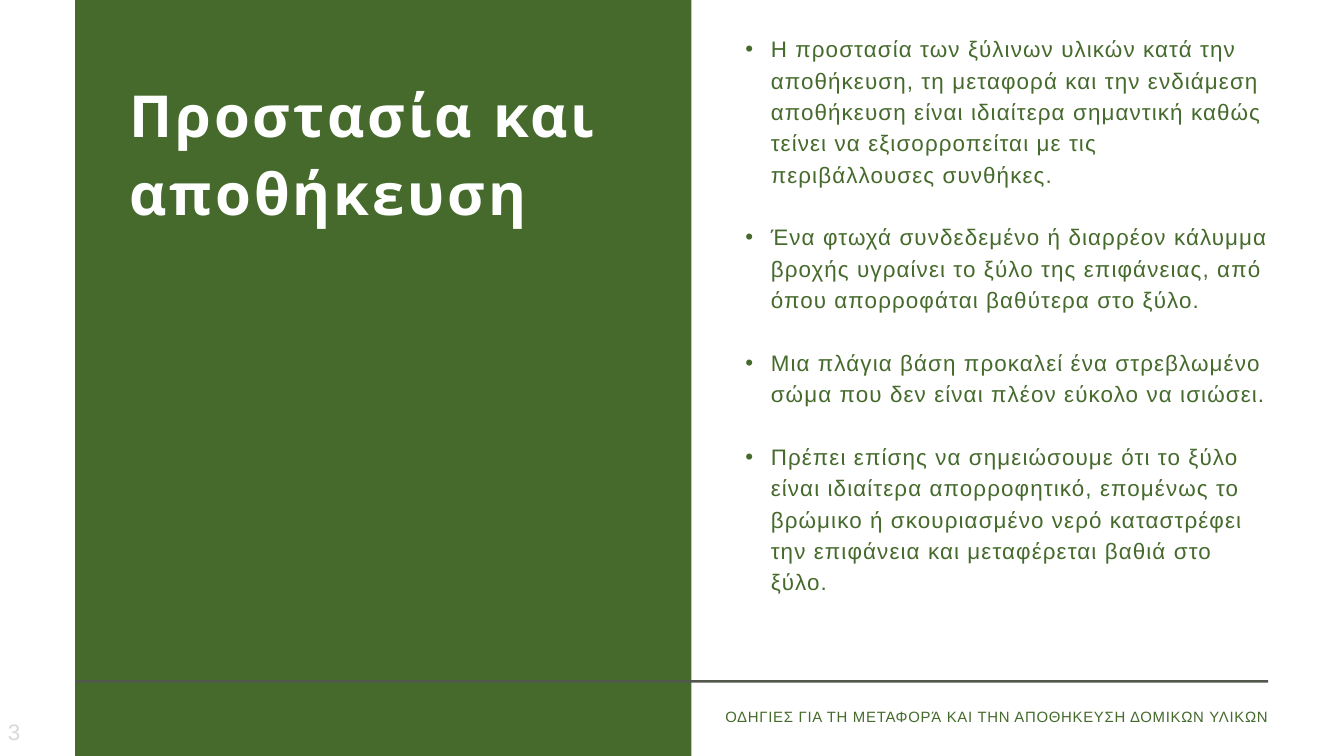
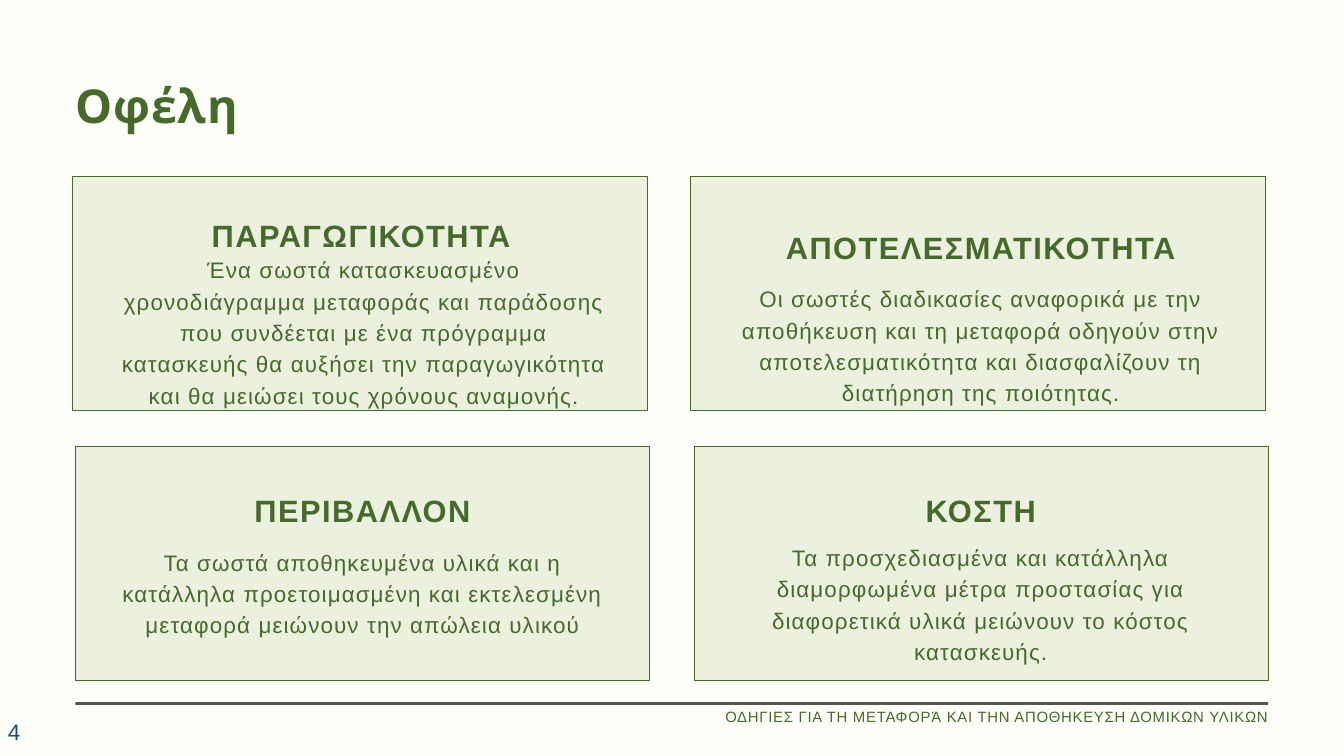
from pptx import Presentation
from pptx.dml.color import RGBColor
from pptx.enum.shapes import MSO_SHAPE as Shape
from pptx.enum.text import MSO_ANCHOR as Anchor, MSO_AUTO_SIZE as AutoSize, PP_ALIGN as Align
from pptx.oxml.ns import qn
from pptx.util import Inches, Pt
from lxml import etree

COLORS = {
    "green": "456A2C",
    "pale": "EBF1DE",
    "gray": "52584D",
    "white": "FFFFFF",
    "cream": "FEFFF8",
    "light_gray": "D9D9D9",
    "blue": "1E4D65",
}
TITLE_FONT = "League Spartan"
BODY_FONT = "Arial"
FOOTER = "ΟΔΗΓΙΕΣ ΓΙΑ ΤΗ ΜΕΤΑΦΟΡΆ ΚΑΙ ΤΗΝ ΑΠΟΘΗΚΕΥΣΗ ΔΟΜΙΚΩΝ ΥΛΙΚΩΝ"
MARGIN, RULE_WIDTH = 1.12, 17.75
CARD_WIDTH, CARD_HEIGHT, TEXT_WIDTH = 8.55, 3.48, 7.39


def add_box(slide, left, top, width, height, fill, line=None):
    shape = slide.shapes.add_shape(
        Shape.RECTANGLE, Inches(left), Inches(top), Inches(width), Inches(height))
    shape.shadow.inherit = False
    shape.fill.solid()
    shape.fill.fore_color.rgb = RGBColor.from_string(COLORS[fill])
    if line:
        shape.line.color.rgb = RGBColor.from_string(COLORS[line])
        shape.line.width = Pt(0.75)
    else:
        shape.line.fill.background()


def write(shape, box, texts, size, leading=None, color="green", font=BODY_FONT, bold=False,
          align=Align.LEFT, spacing=1.2, inset=0, anchor=Anchor.TOP, bullet=False):
    shape.left, shape.top, shape.width, shape.height = [Inches(length) for length in box]
    frame = shape.text_frame
    frame.word_wrap = True
    frame.auto_size = AutoSize.NONE
    frame.vertical_anchor = anchor
    frame.margin_left = frame.margin_right = Inches(inset)
    frame.margin_top = frame.margin_bottom = Inches(inset / 2)
    for index, text in enumerate(texts):
        paragraph = frame.add_paragraph() if index else frame.paragraphs[0]
        run = paragraph.add_run()
        run.text = text
        run._r.get_or_add_rPr().set("spc", str(round(spacing * 100)))
        paragraph.alignment = align
        if leading:
            paragraph.line_spacing = Pt(leading)
        if index:
            paragraph.space_before = Pt(leading)
        if bullet:
            properties = paragraph._p.get_or_add_pPr()
            properties.set("marL", str(Inches(0.38)))
            properties.set("indent", str(-Inches(0.38)))
            etree.SubElement(properties, qn("a:buFont")).set("typeface", "Arial")
            etree.SubElement(properties, qn("a:buChar")).set("char", "•")
        paragraph.font.name = font
        paragraph.font.size = Pt(size)
        paragraph.font.bold = bold
        paragraph.font.color.rgb = RGBColor.from_string(COLORS[color])


presentation = Presentation()
presentation.slide_width = Inches(20)
presentation.slide_height = Inches(11.25)

pages = [
    dict(number="3", number_color="light_gray", background="white", rule_top=10.12,
         title="Προστασία και αποθήκευση", title_box=(1.93, 1.05, 7.56, 2.36),
         title_style=dict(size=62, leading=83.7, color="white", spacing=3.1)),
    dict(number="4", number_color="blue", background="cream", rule_top=10.45,
         title="Οφέλη", title_box=(MARGIN, 1.05, 7.75, 0.94),
         title_style=dict(size=50, leading=66.8, spacing=1)),
]
advice = [
    "Η προστασία των ξύλινων υλικών κατά την αποθήκευση, τη μεταφορά και την ενδιάμεση "
    "αποθήκευση είναι ιδιαίτερα σημαντική καθώς τείνει να εξισορροπείται με τις "
    "περιβάλλουσες συνθήκες.",
    "Ένα φτωχά συνδεδεμένο ή διαρρέον κάλυμμα βροχής υγραίνει το ξύλο της επιφάνειας, "
    "από όπου απορροφάται βαθύτερα στο ξύλο.",
    "Μια πλάγια βάση προκαλεί ένα στρεβλωμένο σώμα που δεν είναι πλέον εύκολο να ισιώσει.",
    "Πρέπει επίσης να σημειώσουμε ότι το ξύλο είναι ιδιαίτερα απορροφητικό, επομένως το "
    "βρώμικο ή σκουριασμένο νερό καταστρέφει την επιφάνεια και μεταφέρεται βαθιά στο ξύλο.",
]
benefits = [
    (1.08, 2.62, "ΠΑΡΑΓΩΓΙΚΟΤΗΤΑ", 1.68, 3.2, 1.72, 3.75, 2.35,
     "Ένα σωστά κατασκευασμένο χρονοδιάγραμμα μεταφοράς και παράδοσης που συνδέεται με ένα "
     "πρόγραμμα κατασκευής θα αυξήσει την παραγωγικότητα και θα μειώσει τους χρόνους αναμονής."),
    (10.28, 2.62, "ΑΠΟΤΕΛΕΣΜΑΤΙΚΟΤΗΤΑ", 10.9, 3.38, 10.9, 4.18, 1.88,
     "Οι σωστές διαδικασίες αναφορικά με την αποθήκευση και τη μεταφορά οδηγούν στην "
     "αποτελεσματικότητα και διασφαλίζουν τη διατήρηση της ποιότητας."),
    (1.12, 6.64, "ΠΕΡΙΒΑΛΛΟΝ", 1.7, 7.3, 1.7, 8.1, 1.43,
     "Τα σωστά αποθηκευμένα υλικά και η κατάλληλα προετοιμασμένη και εκτελεσμένη "
     "μεταφορά μειώνουν την απώλεια υλικού"),
    (10.33, 6.64, "ΚΟΣΤΗ", 10.9, 7.3, 10.9, 8.03, 1.91,
     "Τα προσχεδιασμένα και κατάλληλα διαμορφωμένα μέτρα προστασίας για διαφορετικά "
     "υλικά μειώνουν το κόστος κατασκευής."),
]

for page in pages:
    slide = presentation.slides.add_slide(presentation.slide_layouts[5])
    slide.background.fill.solid()
    slide.background.fill.fore_color.rgb = RGBColor.from_string(COLORS[page["background"]])

    if page["number"] == "3":
        write(slide.shapes.add_textbox(0, 0, 0, 0), (11.09, 0.46, 7.78, 8.11), advice,
              24, 33.6, bullet=True)
        add_box(slide, MARGIN, -0.37, 9.17, 11.98, "green")
    else:
        for (left, top, heading, heading_left, heading_top,
             text_left, text_top, text_height, text) in benefits:
            add_box(slide, left, top, CARD_WIDTH, CARD_HEIGHT, "pale", "green")
            write(slide.shapes.add_textbox(0, 0, 0, 0),
                  (heading_left, heading_top, TEXT_WIDTH, 0.56), [heading],
                  33, 41.2, bold=True, align=Align.CENTER, spacing=1.6)
            write(slide.shapes.add_textbox(0, 0, 0, 0),
                  (text_left, text_top, TEXT_WIDTH, text_height), [text],
                  24, 33.6, align=Align.CENTER)

    add_box(slide, MARGIN, page["rule_top"], RULE_WIDTH, 0.04, "gray")
    title = slide.shapes.title
    write(title, page["title_box"], [page["title"]], font=TITLE_FONT, bold=True,
          **page["title_style"])
    slide.shapes._spTree.append(title._element)
    write(slide.shapes.add_textbox(0, 0, 0, 0), (0.02, 10.69, 2.33, 0.4), [page["number"]],
          24, color=page["number_color"], inset=0.1, anchor=Anchor.MIDDLE)
    write(slide.shapes.add_textbox(0, 0, 0, 0), (10.56, 10.49, 8.32, 0.62), [FOOTER],
          16, 22.4, align=Align.RIGHT, spacing=0.8)

presentation.save("out.pptx")
